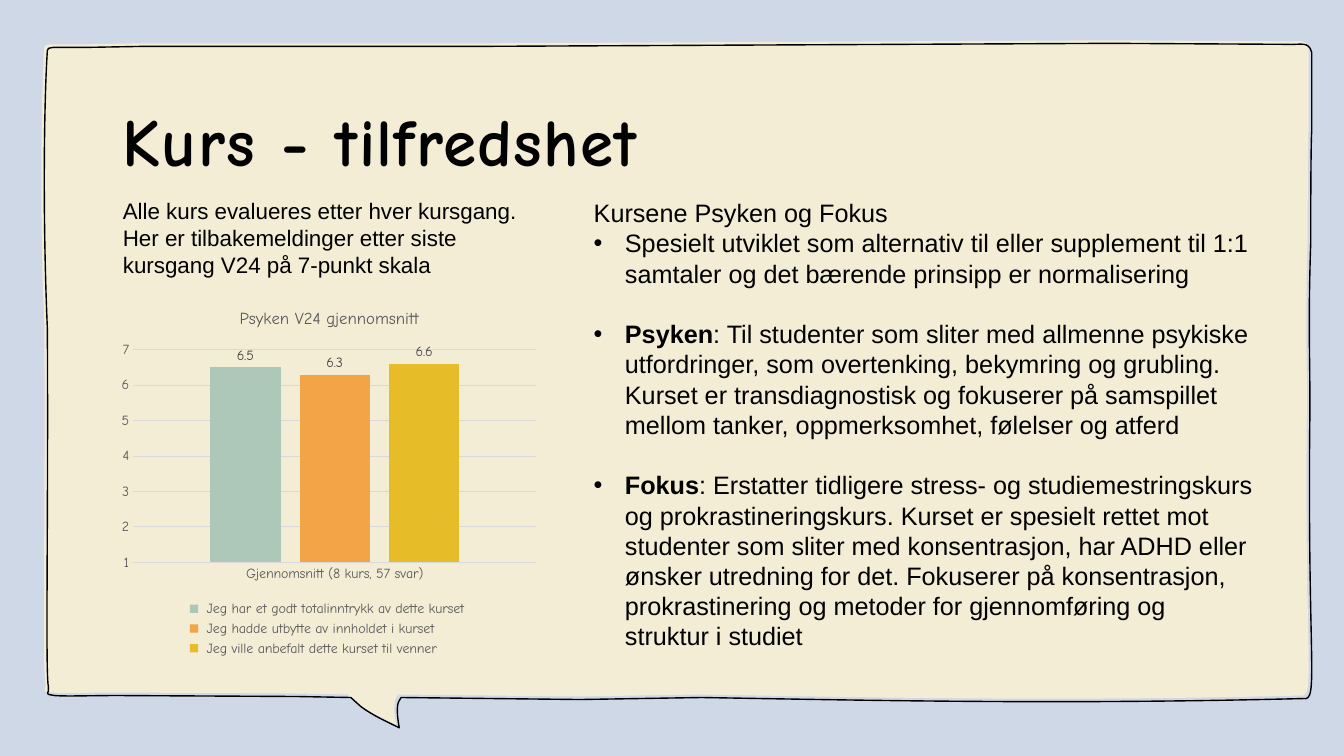
from dataclasses import dataclass
from lxml import etree
from pptx import Presentation
from pptx.chart.data import CategoryChartData
from pptx.dml.color import RGBColor
from pptx.enum.chart import XL_CHART_TYPE, XL_LABEL_POSITION, XL_LEGEND_POSITION, XL_TICK_MARK
from pptx.enum.text import MSO_ANCHOR
from pptx.oxml import parse_xml
from pptx.oxml.ns import nsdecls, qn
from pptx.util import Inches, Pt

COLUMN = XL_CHART_TYPE.COLUMN_CLUSTERED
BOTTOM = XL_LEGEND_POSITION.BOTTOM
OUTSIDE_END = XL_LABEL_POSITION.OUTSIDE_END
NO_TICK = XL_TICK_MARK.NONE
MIDDLE, TOP = MSO_ANCHOR.MIDDLE, MSO_ANCHOR.TOP


@dataclass(frozen=True)
class Theme:
    bg: str = "CFD8E7"
    paper: str = "F3EDD5"
    ink: str = "000000"
    muted: str = "595959"
    label: str = "404040"
    grid: str = "D9D9D9"
    bars: tuple = ("ADC7B9", "F3A447", "E7BC29")
    display: str = "Comic Neue"
    body: str = "Arial"
    title: int = 48
    text: int = 18
    intro: int = 16
    chart_title: int = 12
    chart: int = 10


T = Theme()
WIDTH, HEIGHT = 13.33, 7.5
LEFT, RIGHT = 1.12, 5.79
BODY_TOP, BODY_END = 1.91, 6.55
COLUMN_W = 4.29
BUBBLE_SHIFT = 0.03
BUBBLE = [
    (10.99, 0.4), (12.73, 0.41),
    (12.86, 0.42, 12.95, 0.37, 12.98, 0.49), (12.98, 0.76),
    (12.98, 0.93, 12.98, 1.1, 12.98, 1.27), (12.97, 1.4, 12.97, 2.33, 12.97, 2.39),
    (12.94, 3.27, 12.97, 3.63, 12.96, 4.22), (12.94, 6.54, 13.05, 6.93, 12.9, 6.9),
    (10.53, 6.96, 8.69, 6.92, 6.93, 6.89), (5.72, 6.91), (3.95, 6.89), (3.93, 6.92),
    (3.9, 6.97, 3.91, 7.07, 3.93, 7.19), (3.81, 7.13, 3.67, 7.07, 3.55, 6.98),
    (3.45, 6.89), (2.92, 6.88), (1.14, 6.87),
    (0.86, 6.87, 0.63, 6.88, 0.51, 6.87), (0.4, 6.85, 0.46, 6.87, 0.45, 6.78),
    (0.42, 6.63, 0.45, 5.19, 0.44, 3.23), (0.39, 2.04, 0.41, 0.93, 0.44, 0.47),
    (0.45, 0.46, 0.45, 0.45, 0.45, 0.45), (0.5, 0.44), (0.74, 0.44), (0.86, 0.44),
    (1.4, 0.43), (4.77, 0.43), (10.99, 0.4),
]
INTRO = ("Alle kurs evalueres etter hver kursgang. Her er tilbakemeldinger "
         "etter siste kursgang V24 på 7-punkt skala")
HEADING = "Kursene Psyken og Fokus"
BULLETS = [
    ("", "Spesielt utviklet som alternativ til eller supplement til 1:1 samtaler "
         "og det bærende prinsipp er normalisering"),
    ("Psyken", ": Til studenter som sliter med allmenne psykiske utfordringer, som "
               "overtenking, bekymring og grubling. Kurset er transdiagnostisk og "
               "fokuserer på samspillet mellom tanker, oppmerksomhet, følelser og atferd"),
    ("Fokus", ": Erstatter tidligere stress- og studiemestringskurs og "
              "prokrastineringskurs. Kurset er spesielt rettet mot studenter som sliter "
              "med konsentrasjon, har ADHD eller ønsker utredning for det. Fokuserer på "
              "konsentrasjon, prokrastinering og metoder for gjennomføring og struktur i studiet"),
]
CHART_TITLE = "Psyken V24 gjennomsnitt"
CATEGORY = "Gjennomsnitt (8 kurs, 57 svar)"
RATINGS = [
    (" Jeg har et godt totalinntrykk av dette kurset ", 6.5),
    (" Jeg hadde utbytte av innholdet i kurset ", 6.3),
    (" Jeg ville anbefalt dette kurset til venner ", 6.6),
]


def rgb(color):
    return RGBColor.from_string(color)


def style(font, size, color, face, bold=False):
    font.size, font.name, font.bold = Pt(size), face, bold
    font.color.rgb = rgb(color)


def add_run(p, text, size, face=T.body, bold=False):
    r = p.add_run()
    r.text = text
    style(r.font, size, T.ink, face, bold)
    return r


def text_frame(s, box, anchor=TOP):
    tf = s.shapes.add_textbox(*map(Inches, box)).text_frame
    tf.word_wrap, tf.vertical_anchor = True, anchor
    return tf


def bend_segments(sp, shift):
    lines = list(sp._element.iter(qn("a:lnTo")))
    for line, part in zip(lines, BUBBLE[1:]):
        if len(part) == 2:
            continue
        line.tag = qn("a:cubicBezTo")
        for i in (0, 1):
            pt = etree.Element(qn("a:pt"))
            pt.set("x", str(Inches(part[2 * i] + shift) - sp.left))
            pt.set("y", str(Inches(part[2 * i + 1] + shift) - sp.top))
            line.insert(i, pt)


def add_bubble(s, shift, filled):
    points = [(Inches(part[-2] + shift), Inches(part[-1] + shift)) for part in BUBBLE]
    builder = s.shapes.build_freeform(*points[0])
    builder.add_line_segments(points[1:], close=True)
    sp = builder.convert_to_shape()
    bend_segments(sp, shift)
    sp.shadow.inherit = False
    if filled:
        sp.fill.solid()
        sp.fill.fore_color.rgb = rgb(T.paper)
        sp.line.fill.background()
    else:
        sp.fill.background()
        sp.line.color.rgb = rgb(T.ink)
        sp.line.width = Pt(1)


def add_title(s, box):
    p = text_frame(s, box, MIDDLE).paragraphs[0]
    r = add_run(p, "Kurs - tilfredshet", T.title, T.display, True)
    r.font._element.set("spc", "100")


def add_intro(s, box):
    add_run(text_frame(s, box).paragraphs[0], INTRO, T.intro)


def add_courses(s, box):
    tf = text_frame(s, box)
    add_run(tf.paragraphs[0], HEADING, T.text)
    for i, (name, text) in enumerate(BULLETS):
        p = tf.add_paragraph()
        p.space_before = Pt(1.2 * T.text if i else 0)
        pPr = p._p.get_or_add_pPr()
        indent = Inches(0.31)
        pPr.set("marL", str(indent))
        pPr.set("indent", str(-indent))
        etree.SubElement(pPr, qn("a:buFont")).set("typeface", T.body)
        etree.SubElement(pPr, qn("a:buChar")).set("char", "•")
        if name:
            add_run(p, name, T.text, bold=True)
        add_run(p, text, T.text)


def place_plot(chart, x, y, w, h):
    plot_area = chart._chartSpace.chart.plotArea
    for old in plot_area.findall(qn("c:layout")):
        plot_area.remove(old)
    plot_area.insert(0, parse_xml(
        f'<c:layout {nsdecls("c")}><c:manualLayout><c:layoutTarget val="inner"/>'
        f'<c:xMode val="edge"/><c:yMode val="edge"/><c:x val="{x}"/><c:y val="{y}"/>'
        f'<c:w val="{w}"/><c:h val="{h}"/></c:manualLayout></c:layout>'))


def add_ratings(s, box):
    data = CategoryChartData(number_format="General")
    data.categories = [CATEGORY]
    for name, value in RATINGS:
        data.add_series(name, [value])
    chart = s.shapes.add_chart(COLUMN, *map(Inches, box), data).chart
    style(chart.font, T.chart, T.ink, T.display)
    chart.has_title = True
    r = chart.chart_title.text_frame.paragraphs[0].add_run()
    r.text = CHART_TITLE
    style(r.font, T.chart_title, T.muted, T.display)
    chart.has_legend = True
    chart.legend.position, chart.legend.include_in_layout = BOTTOM, False
    style(chart.legend.font, T.chart, T.muted, T.display)
    for axis in (chart.category_axis, chart.value_axis):
        axis.major_tick_mark = axis.minor_tick_mark = NO_TICK
        style(axis.tick_labels.font, T.chart, T.muted, T.display)
    values = chart.value_axis
    values.minimum_scale, values.maximum_scale, values.major_unit = 1, 7, 1
    values.format.line.fill.background()
    for line in (chart.category_axis.format.line, values.major_gridlines.format.line):
        line.color.rgb = rgb(T.grid)
        line.width = Pt(0.75)
    plot = chart.plots[0]
    plot.gap_width, plot.overlap, plot.vary_by_categories = 219, -27, False
    for series, color in zip(plot.series, T.bars):
        series.format.fill.solid()
        series.format.fill.fore_color.rgb = rgb(color)
        labels = series.data_labels
        labels.show_value, labels.position = True, OUTSIDE_END
        labels.number_format, labels.number_format_is_linked = "0.0", False
        style(labels.font, T.chart, T.label, T.display)
    w, h = box[2:]
    place_plot(chart, 0.2 / w, 0.57 / h, 4 / w, 2.11 / h)


def main():
    prs = Presentation()
    prs.slide_width, prs.slide_height = Inches(WIDTH), Inches(HEIGHT)
    s = prs.slides.add_slide(prs.slide_layouts[6])
    s.background.fill.solid()
    s.background.fill.fore_color.rgb = rgb(T.bg)
    add_bubble(s, 0, True)
    add_bubble(s, BUBBLE_SHIFT, False)
    add_title(s, (LEFT, 0.61, 11.3, 1.55))
    add_ratings(s, (LEFT, 2.9, COLUMN_W, BODY_END - 2.9))
    add_intro(s, (LEFT, BODY_TOP, COLUMN_W, 0.91))
    add_courses(s, (RIGHT, BODY_TOP, 6.75, BODY_END - BODY_TOP))
    prs.save("out.pptx")


if __name__ == "__main__":
    main()
